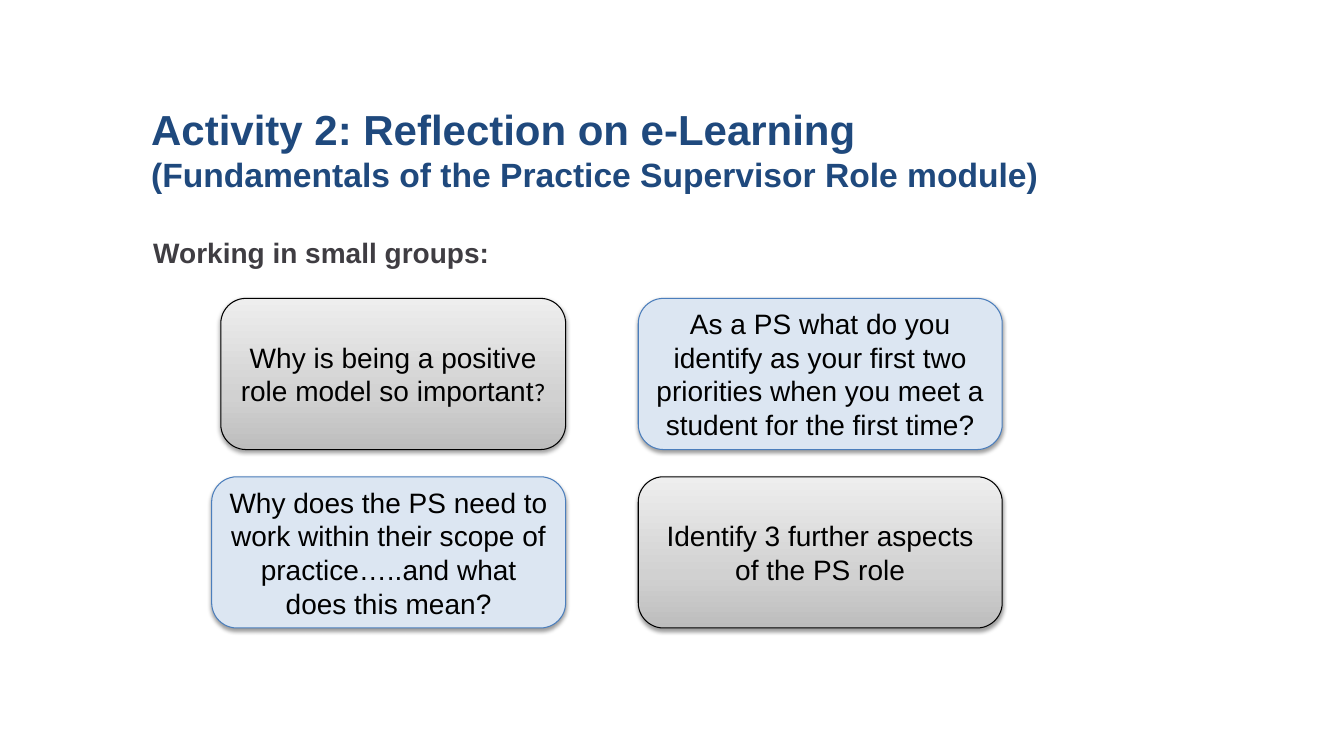
from copy import deepcopy
from dataclasses import dataclass

from lxml import etree
from pptx import Presentation
from pptx.dml.color import RGBColor
from pptx.enum.shapes import MSO_SHAPE
from pptx.enum.text import MSO_ANCHOR, PP_ALIGN
from pptx.oxml.ns import qn
from pptx.util import Inches, Pt

CARD_SHAPE = MSO_SHAPE.FLOWCHART_ALTERNATE_PROCESS
TOP, MIDDLE = MSO_ANCHOR.TOP, MSO_ANCHOR.MIDDLE
LEFT, CENTER = PP_ALIGN.LEFT, PP_ALIGN.CENTER

WIDTH, HEIGHT = Inches(13.33), Inches(7.5)
COLORS = {
    "title": "1F497D", "lead": "3F3D42", "text": "000000",
    "blue": "DCE6F2", "blue_line": "4B7EBC", "black_line": "000000",
    "shadow": "000000", "dark": "BDBDBD", "mid": "D1D1D1", "light": "EEEEEE",
}
GRAY_STOPS = ((0, "dark"), (0.35, "mid"), (1, "light"))

# Shares of the slide's size, in percent
LEFT_COLUMN_END = 42.09
RIGHT_COLUMN, RIGHT_WIDTH = 47.49, 27.08
ROWS = (39.47, 63.07)
CARD_HEIGHT = 20


@dataclass
class Place:
    left: float
    top: float
    width: float
    height: float

    def lengths(self) -> tuple[int, int, int, int]:
        return (int(WIDTH * self.left / 100), int(HEIGHT * self.top / 100),
                int(WIDTH * self.width / 100), int(HEIGHT * self.height / 100))


@dataclass
class Span:
    text: str
    size: float = 20
    color: str = "text"
    bold: bool = False
    font: str = "Arial"


@dataclass
class Card:
    place: Place
    spans: list[Span]
    gray: bool


def left_place(left: float, row: int) -> Place:
    """Place a card that ends at the shared right edge of the left column."""
    return Place(left, ROWS[row], LEFT_COLUMN_END - left, CARD_HEIGHT)


def right_place(row: int) -> Place:
    return Place(RIGHT_COLUMN, ROWS[row], RIGHT_WIDTH, CARD_HEIGHT)


HEADINGS = [
    (Place(11.25, 13.33, 77.57, 15.6), [
        Span("Activity 2: Reflection on e-Learning\v", 30, "title", True),
        Span("(Fundamentals of the Practice Supervisor Role module)", 24, "title", True)]),
    (Place(11.4, 30.8, 80.72, 48.8), [
        Span("Working in small groups:", 20, "lead", True)]),
]
CARDS = [
    Card(right_place(0), [Span(
        "As a PS what do you identify as your first two priorities "
        "when you meet a student for the first time?")], False),
    Card(left_place(16.43, 0), [
        Span("Why is being a positive role model so important"),
        Span("?", size=18, font="Calibri")], True),
    Card(left_place(15.75, 1), [Span(
        "Why does the PS need to work within their scope of practice"
        "…..and what does this mean?")], False),
    Card(right_place(1), [Span("Identify 3 further aspects of the PS role")], True),
]


def color(name: str) -> RGBColor:
    return RGBColor.from_string(COLORS[name])


def set_values(target, values: dict) -> None:
    for name, value in values.items():
        setattr(target, name, value)


def write(box, spans: list[Span], align, frame_format: dict) -> None:
    frame = box.text_frame
    set_values(frame, {"word_wrap": True, **frame_format})
    para = frame.paragraphs[0]
    para.alignment = align
    for span in spans:
        lines = span.text.split("\v")
        for index, line in enumerate(lines):
            if index:
                para.add_line_break()
            if line:
                run = para.add_run()
                run.text = line
                set_values(run.font, {"name": span.font, "size": Pt(span.size),
                                      "bold": span.bold})
                run.font.color.rgb = color(span.color)


def fill_gray(shape) -> None:
    """Fill from dark at the bottom to light at the top."""
    fill = shape.fill
    fill.gradient()
    fill.gradient_angle = 90
    stop_list = shape._element.spPr.find(f".//{qn('a:gsLst')}")
    while len(stop_list) < len(GRAY_STOPS):
        stop_list.append(deepcopy(stop_list[0]))
    for stop, (position, name) in zip(fill.gradient_stops, GRAY_STOPS):
        stop.position = position
        stop.color.rgb = color(name)


def add_shadow(shape) -> None:
    shape.shadow.inherit = False
    effects = shape._element.spPr.find(qn("a:effectLst"))
    shadow = etree.SubElement(effects, qn("a:outerShdw"), {
        "blurRad": str(Pt(3.1)), "dist": str(Pt(1.6)),
        "dir": "5400000", "rotWithShape": "0"})
    tone = etree.SubElement(shadow, qn("a:srgbClr"), val=COLORS["shadow"])
    etree.SubElement(tone, qn("a:alpha"), val="38000")


def add_heading(page, place: Place, spans: list[Span]) -> None:
    box = page.shapes.add_textbox(*place.lengths())
    write(box, spans, LEFT, {
        "margin_left": 0, "margin_right": 0, "margin_bottom": 0,
        "margin_top": Inches(0.03), "vertical_anchor": TOP})


def add_card(page, card: Card) -> None:
    shape = page.shapes.add_shape(CARD_SHAPE, *card.place.lengths())
    if card.gray:
        fill_gray(shape)
    else:
        shape.fill.solid()
        shape.fill.fore_color.rgb = color("blue")
    shape.line.color.rgb = color("black_line" if card.gray else "blue_line")
    shape.line.width = Pt(0.75)
    add_shadow(shape)
    write(shape, card.spans, CENTER, {"vertical_anchor": MIDDLE})


def main() -> None:
    deck = Presentation()
    set_values(deck, {"slide_width": WIDTH, "slide_height": HEIGHT})
    page = deck.slides.add_slide(deck.slide_layouts[6])
    for place, spans in HEADINGS:
        add_heading(page, place, spans)
    for card in CARDS:
        add_card(page, card)
    deck.save("out.pptx")


if __name__ == "__main__":
    main()
